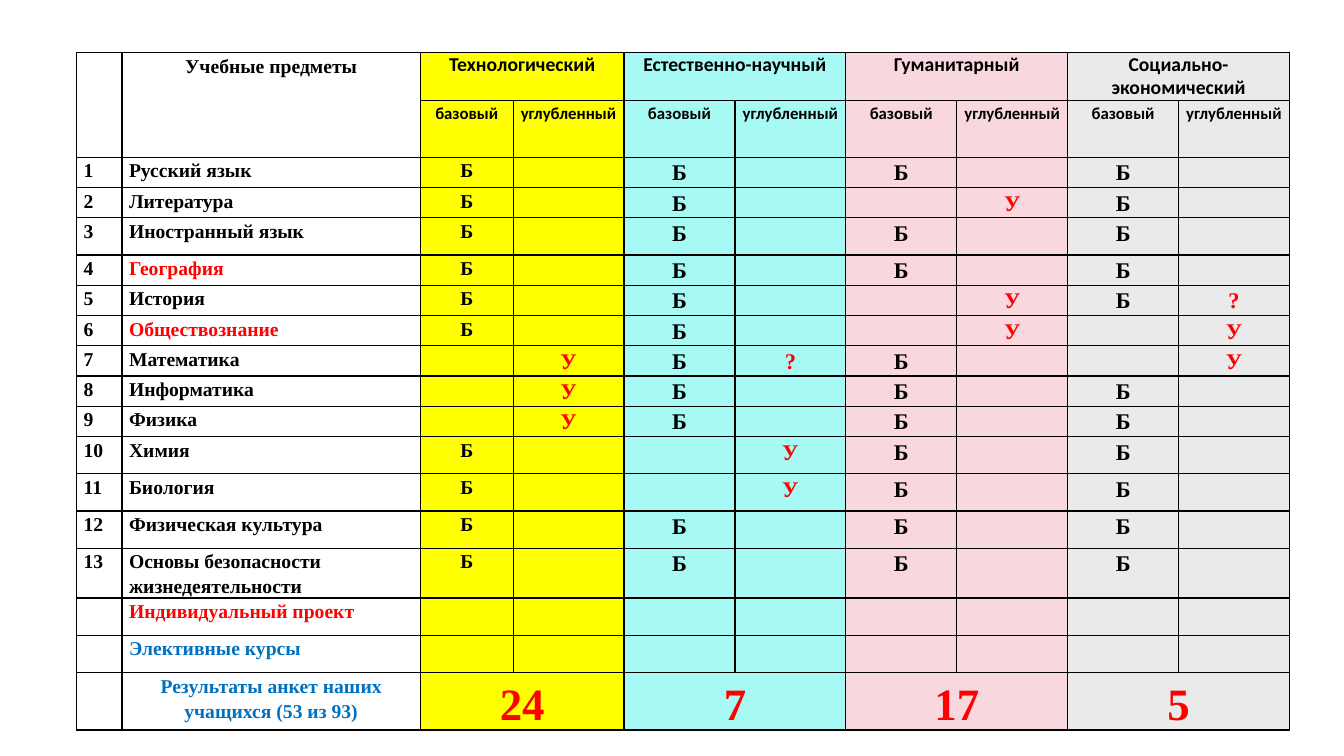
"""Builds a slide with the table of school subjects and their levels by study profile."""
from lxml import etree
from pptx import Presentation
from pptx.dml.color import RGBColor
from pptx.enum.text import PP_ALIGN
from pptx.oxml.ns import qn
from pptx.util import Inches, Pt

LEFT, CENTER = PP_ALIGN.LEFT, PP_ALIGN.CENTER
BLACK, WHITE, RED, BLUE = "000000", "FFFFFF", "FF0000", "0070C0"
SERIF, SANS = "Times New Roman", "Calibri"

profiles = [
    ("Технологический", "FFFF00", "24"),
    ("Естественно-научный", "A7F9F3", "7"),
    ("Гуманитарный", "F8D7DE", "17"),
    ("Социально-экономический", "EAEAEA", "5"),
]
levels = ["базовый", "углубленный"]
subjects = [
    ("Русский язык", BLACK, "Б-Б-Б-Б-", 0.3),
    ("Литература", BLACK, "Б-Б--УБ-", 0.3),
    ("Иностранный язык", BLACK, "Б-Б-Б-Б-", 0.37),
    ("География", RED, "Б-Б-Б-Б-", 0.3),
    ("История", BLACK, "Б-Б--УБ?", 0.3),
    ("Обществознание", RED, "Б-Б--У-У", 0.3),
    ("Математика", BLACK, "-УБ?Б--У", 0.3),
    ("Информатика", BLACK, "-УБ-Б-Б-", 0.3),
    ("Физика", BLACK, "-УБ-Б-Б-", 0.3),
    ("Химия", BLACK, "Б--УБ-Б-", 0.37),
    ("Биология", BLACK, "Б--УБ-Б-", 0.37),
    ("Физическая культура", BLACK, "Б-Б-Б-Б-", 0.37),
    ("Основы безопасности жизнедеятельности", BLACK, "Б-Б-Б-Б-", 0.49),
]
extras = [("Индивидуальный проект", RED), ("Элективные курсы", BLUE)]

column_widths = [0.45, 2.96, 0.92] + [1.1] * 7
row_heights = [0.48, 0.56] + [subject[3] for subject in subjects] + [0.37, 0.37, 0.57]
first_extra = 2 + len(subjects)
result_row = len(row_heights) - 1


def color(value):
    return RGBColor.from_string(value)


def write(row, column, text, size=14, ink=BLACK, align=CENTER, font=SERIF, spacing=1.15):
    paragraph = table.cell(row, column).text_frame.paragraphs[0]
    paragraph.text = text
    paragraph.alignment = align
    paragraph.line_spacing = spacing
    run_font = paragraph.runs[0].font
    run_font.name, run_font.size, run_font.bold = font, Pt(size), True
    run_font.color.rgb = color(ink)


prs = Presentation()
prs.slide_width, prs.slide_height = Inches(13.33), Inches(7.5)
slide = prs.slides.add_slide(prs.slide_layouts[6])
table = slide.shapes.add_table(
    len(row_heights), len(column_widths), Inches(0.76), Inches(0.52),
    Inches(sum(column_widths)), Inches(sum(row_heights))).table
table.first_row = table.horz_banding = False
for column, width in zip(table.columns, column_widths):
    column.width = Inches(width)
for row, height in zip(table.rows, row_heights):
    row.height = Inches(height)

write(0, 1, "Учебные предметы")
for index, (profile, fill, votes) in enumerate(profiles):
    column = 2 + 2 * index
    write(0, column, profile, font=SANS, spacing=1.0)
    for offset, level in enumerate(levels):
        write(1, column + offset, level, 12, font=SANS)
    write(result_row, column, votes, 32, RED)

for number, (subject, ink, marks, height) in enumerate(subjects, 1):
    write(number + 1, 0, str(number), align=LEFT)
    write(number + 1, 1, subject, ink=ink, align=LEFT)
    for column, mark in enumerate(marks, 2):
        if mark != "-":
            write(number + 1, column, mark, 14 if column == 2 else 16,
                  BLACK if mark == "Б" else RED)

for row, (extra, ink) in enumerate(extras, first_extra):
    write(row, 1, extra, ink=ink, align=LEFT)
write(result_row, 1, "Результаты анкет наших учащихся (53 из 93)", ink=BLUE)

for row in range(len(row_heights)):
    for column in range(len(column_widths)):
        cell = table.cell(row, column)
        cell.margin_left = cell.margin_right = Inches(0.07)
        cell.margin_top = cell.margin_bottom = 0
        properties = cell._tc.get_or_add_tcPr()
        for side in ("lnL", "lnR", "lnT", "lnB"):
            border = etree.SubElement(properties, qn(f"a:{side}"), w=str(Pt(1)))
            solid = etree.SubElement(border, qn("a:solidFill"))
            etree.SubElement(solid, qn("a:srgbClr"), val=BLACK)
        cell.fill.solid()
        cell.fill.fore_color.rgb = color(WHITE if column < 2 else profiles[(column - 2) // 2][1])
        if not cell.text_frame.text:
            etree.SubElement(cell.text_frame.paragraphs[0]._p, qn("a:endParaRPr"), sz="1200")

for column in (0, 1):
    table.cell(0, column).merge(table.cell(1, column))
for row in (0, result_row):
    for column in range(2, len(column_widths), 2):
        table.cell(row, column).merge(table.cell(row, column + 1))

prs.save("out.pptx")
